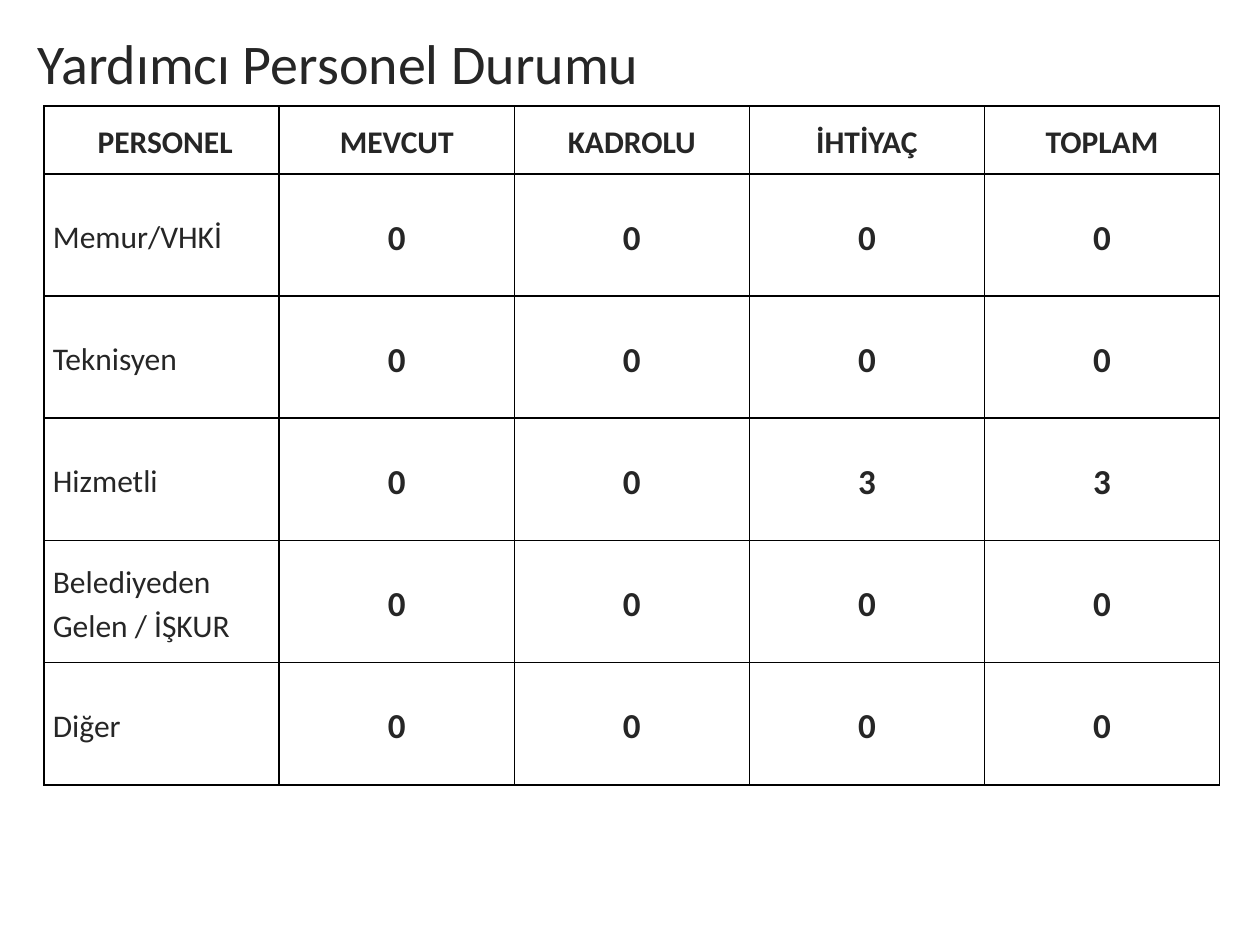
"""Build the support staff status slide with its table."""
from lxml import etree
from pptx import Presentation
from pptx.dml.color import RGBColor
from pptx.enum.text import MSO_ANCHOR, PP_ALIGN
from pptx.oxml.ns import qn
from pptx.util import Inches, Pt

MIDDLE = MSO_ANCHOR.MIDDLE
LEFT, CENTER = PP_ALIGN.LEFT, PP_ALIGN.CENTER

TITLE = "Yardımcı Personel Durumu"
HEADERS = [" PERSONEL", "MEVCUT", "KADROLU", "İHTİYAÇ", "TOPLAM"]
STAFF = [
    ("Memur/VHKİ", 0, 0, 0, 0),
    ("Teknisyen", 0, 0, 0, 0),
    ("Hizmetli", 0, 0, 3, 3),
    ("Belediyeden Gelen / İŞKUR", 0, 0, 0, 0),
    ("Diğer", 0, 0, 0, 0),
]
FONT, INK, BORDER = "Calibri", "262626", "000000"
TABLE_LEFT, TABLE_TOP, TABLE_WIDTH = 0.35, 0.84, 9.33
HEADER_HEIGHT, ROW_HEIGHT = 0.54, 0.97


def rgb(value):
    return RGBColor.from_string(value)


def write(tf, text, size, bold=False, align=LEFT):
    p = tf.paragraphs[0]
    p.text = text
    p.alignment = align
    p.line_spacing = 1.15
    p.font.name = FONT
    p.font.size = Pt(size)
    p.font.bold = bold
    p.font.color.rgb = rgb(INK)
    return p


def add_borders(cell):
    props = cell._tc.get_or_add_tcPr()
    for side in ("a:lnL", "a:lnR", "a:lnT", "a:lnB"):
        line = etree.SubElement(props, qn(side), w=str(Pt(1)))
        fill = etree.SubElement(line, qn("a:solidFill"))
        etree.SubElement(fill, qn("a:srgbClr"), val=BORDER)


def add_title(s):
    box = s.shapes.add_textbox(Inches(0.2), Inches(0.08), Inches(9.47), Inches(0.75))
    tf = box.text_frame
    tf.word_wrap = True
    tf.vertical_anchor = MIDDLE
    write(tf, TITLE, 32).space_after = Pt(10)


def add_staff_table(s):
    rows = [HEADERS, *STAFF]
    heights = [HEADER_HEIGHT] + [ROW_HEIGHT] * len(STAFF)
    frame = s.shapes.add_table(
        len(rows), len(HEADERS), Inches(TABLE_LEFT), Inches(TABLE_TOP),
        Inches(TABLE_WIDTH), Inches(sum(heights)))
    table = frame.table
    table.first_row = table.horz_banding = False
    for column in table.columns:
        column.width = Inches(TABLE_WIDTH / len(HEADERS))
    for i, (values, height) in enumerate(zip(rows, heights)):
        table.rows[i].height = Inches(height)
        for j, value in enumerate(values):
            cell = table.cell(i, j)
            cell.vertical_anchor = MIDDLE
            cell.margin_left = cell.margin_right = Inches(0.07)
            cell.margin_top = cell.margin_bottom = 0
            add_borders(cell)
            cell.fill.background()
            label = i > 0 and j == 0
            size = 20 if i > 0 and j > 0 else 18
            write(cell.text_frame, str(value), size, not label, LEFT if label else CENTER)


def main():
    prs = Presentation()
    prs.slide_width, prs.slide_height = Inches(10), Inches(7.5)
    s = prs.slides.add_slide(prs.slide_layouts[6])
    add_staff_table(s)
    add_title(s)
    prs.save("out.pptx")


if __name__ == "__main__":
    main()
